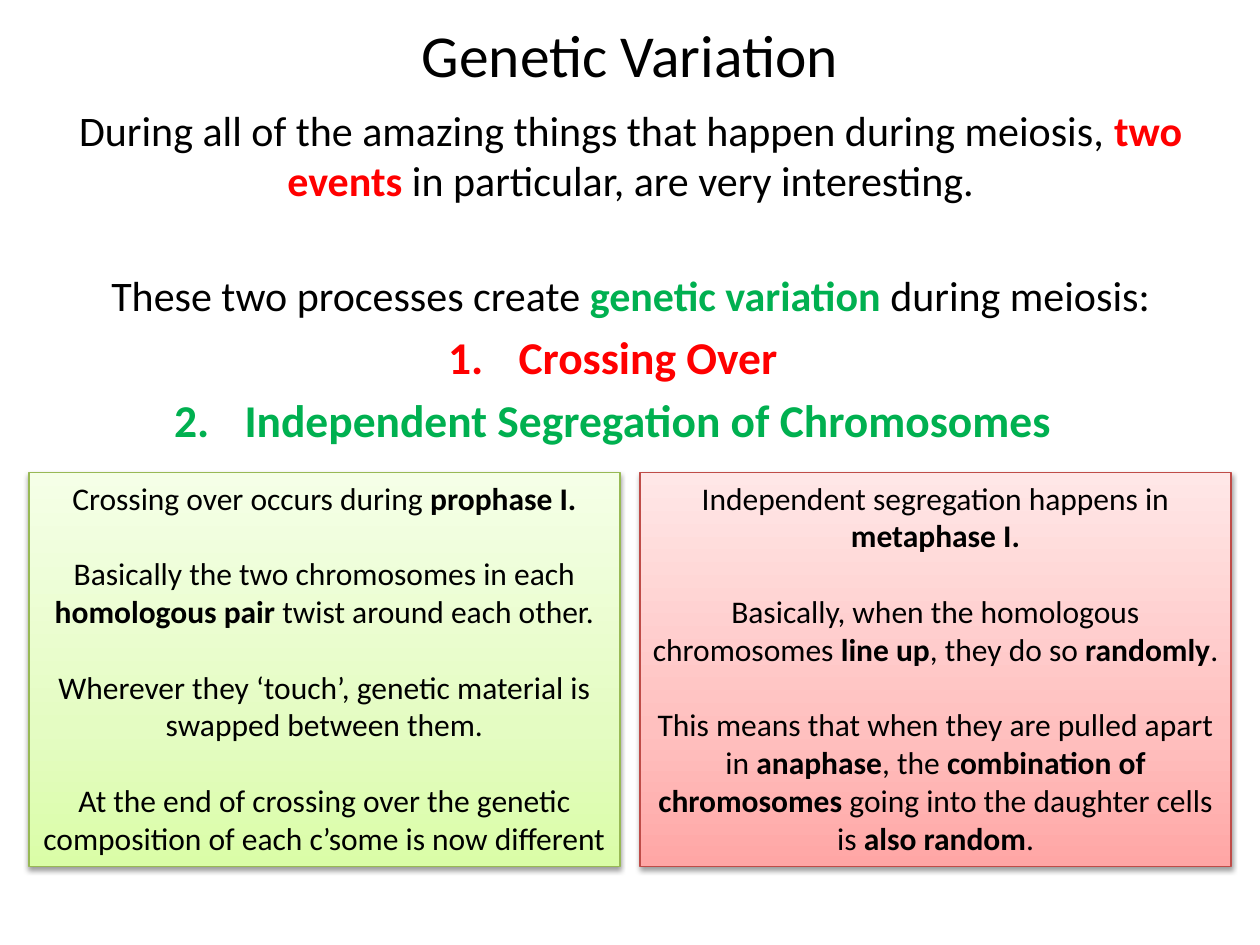
import pptx
import pptx.util
import pptx.dml.color
import pptx.enum.shapes
import pptx.enum.text
import pptx.oxml
import pptx.oxml.ns

BLACK, RED, GREEN = "000000", "FF0000", "00B050"
CENTER = pptx.enum.text.PP_ALIGN.CENTER
NAMESPACE = pptx.oxml.ns.nsdecls("a")


def color(value):
    return pptx.dml.color.RGBColor.from_string(value)


def fill_paragraph(paragraph, runs, size, space_before=0):
    """Add runs given as (text, colour, bold) to a centred paragraph."""
    paragraph.alignment = CENTER
    paragraph.space_before = pptx.util.Pt(space_before)
    for text, run_color, bold in runs:
        run = paragraph.add_run()
        run.text = text
        run.font.name = "Calibri"
        run.font.size = pptx.util.Pt(size)
        run.font.bold = bold
        run.font.color.rgb = color(run_color)


presentation = pptx.Presentation()
width = presentation.slide_width = pptx.util.Inches(10)
height = presentation.slide_height = pptx.util.Inches(7.5)
slide = presentation.slides.add_slide(presentation.slide_layouts[5])

# Title
title = slide.shapes.title
title.left, title.top = int(width * 0.05), pptx.util.Inches(0.23)
title.width, title.height = int(width * 0.9), pptx.util.Inches(0.39)
title.text_frame.vertical_anchor = pptx.enum.text.MSO_ANCHOR.MIDDLE
fill_paragraph(title.text_frame.paragraphs[0], [("Genetic Variation", BLACK, False)], 34)

# Introduction and numbered processes: runs, size, space before, numbered
introduction = [
    ([("During all of the amazing things that happen during meiosis, ", BLACK, False),
      ("two events", RED, True),
      (" in particular, are very interesting.", BLACK, False)], 24, 0, False),
    ([("These two processes create ", BLACK, False),
      ("genetic variation", GREEN, True),
      (" during meiosis:", BLACK, False)], 24, 37, False),
    ([("Crossing Over", RED, True)], 26, 5, True),
    ([("Independent Segregation of Chromosomes", GREEN, True)], 26, 5, True),
]
body = slide.shapes.add_textbox(pptx.util.Inches(0.16), pptx.util.Inches(0.78),
                                pptx.util.Inches(9.69), pptx.util.Inches(6.56))
frame = body.text_frame
frame.word_wrap = True
for index, (runs, size, space_before, numbered) in enumerate(introduction):
    paragraph = frame.add_paragraph() if index else frame.paragraphs[0]
    fill_paragraph(paragraph, runs, size, space_before)
    if numbered:
        properties = paragraph._p.get_or_add_pPr()
        properties.set("marL", str(pptx.util.Inches(0.19)))
        properties.set("indent", str(pptx.util.Inches(-0.56)))
        for markup in ('<a:buFont {} typeface="+mj-lt"/>',
                       '<a:buAutoNum {} type="arabicPeriod"/>'):
            properties.append(pptx.oxml.parse_xml(markup.format(NAMESPACE)))

# Explanation boxes: line colour, gradient colours, paragraphs of (text, bold)
boxes = [
    ("98B955", ("DAFDA7", "E4FCC2", "F5FFE7"), [
        [("Crossing over occurs during ", False), ("prophase I.", True)],
        [("Basically the two chromosomes in each ", False), ("homologous pair", True),
         (" twist around each other.", False)],
        [("Wherever they ‘touch’, genetic material is swapped between them.", False)],
        [("At the end of crossing over the genetic composition of each c’some "
          "is now different", False)],
    ]),
    ("BF4C48", ("FFA6A5", "FFC0BF", "FFE7E7"), [
        [("Independent segregation happens in ", False), ("metaphase I.", True)],
        [("Basically, when the homologous chromosomes ", False), ("line up", True),
         (", they do so", False), (" randomly", True), (".", False)],
        [("This means that when they are pulled apart in ", False), ("anaphase", True),
         (", the ", False), ("combination of chromosomes ", True),
         ("going into the daughter cells is ", False), ("also random", True), (".", False)],
    ]),
]
margin, gap = pptx.util.Inches(0.23), pptx.util.Inches(0.16)
box_width = (width - 2 * margin - gap) // 2
for column, (line_color, stops, paragraphs) in enumerate(boxes):
    box = slide.shapes.add_shape(
        pptx.enum.shapes.MSO_SHAPE.RECTANGLE, margin + column * (box_width + gap),
        height // 2, box_width, pptx.util.Inches(3.13))
    box.line.color.rgb = color(line_color)
    box.line.width = pptx.util.Pt(0.75)

    # Three-stop gradient, darkest at the bottom
    box.fill.gradient()
    box.fill.gradient_angle = 90
    stop_list = box._element.spPr.find(".//" + pptx.oxml.ns.qn("a:gsLst"))
    for stop in list(stop_list):
        stop_list.remove(stop)
    for position, stop_color in zip((0, 35, 100), stops):
        stop_list.append(pptx.oxml.parse_xml(
            f'<a:gs {NAMESPACE} pos="{position * 1000}"><a:srgbClr val="{stop_color}"/></a:gs>'))

    # Soft shadow below the box
    box._element.spPr.append(pptx.oxml.parse_xml(
        f'<a:effectLst {NAMESPACE}><a:outerShdw blurRad="{pptx.util.Pt(3.1)}" '
        f'dist="{pptx.util.Pt(1.6)}" dir="5400000" rotWithShape="0">'
        '<a:srgbClr val="000000"><a:alpha val="38000"/></a:srgbClr>'
        '</a:outerShdw></a:effectLst>'))

    frame = box.text_frame
    frame.word_wrap = True
    frame.vertical_anchor = pptx.enum.text.MSO_ANCHOR.TOP
    for index, runs in enumerate(paragraphs):
        paragraph = frame.add_paragraph() if index else frame.paragraphs[0]
        fill_paragraph(paragraph, [(text, BLACK, bold) for text, bold in runs],
                       18, 21.6 if index else 0)

presentation.save("out.pptx")
